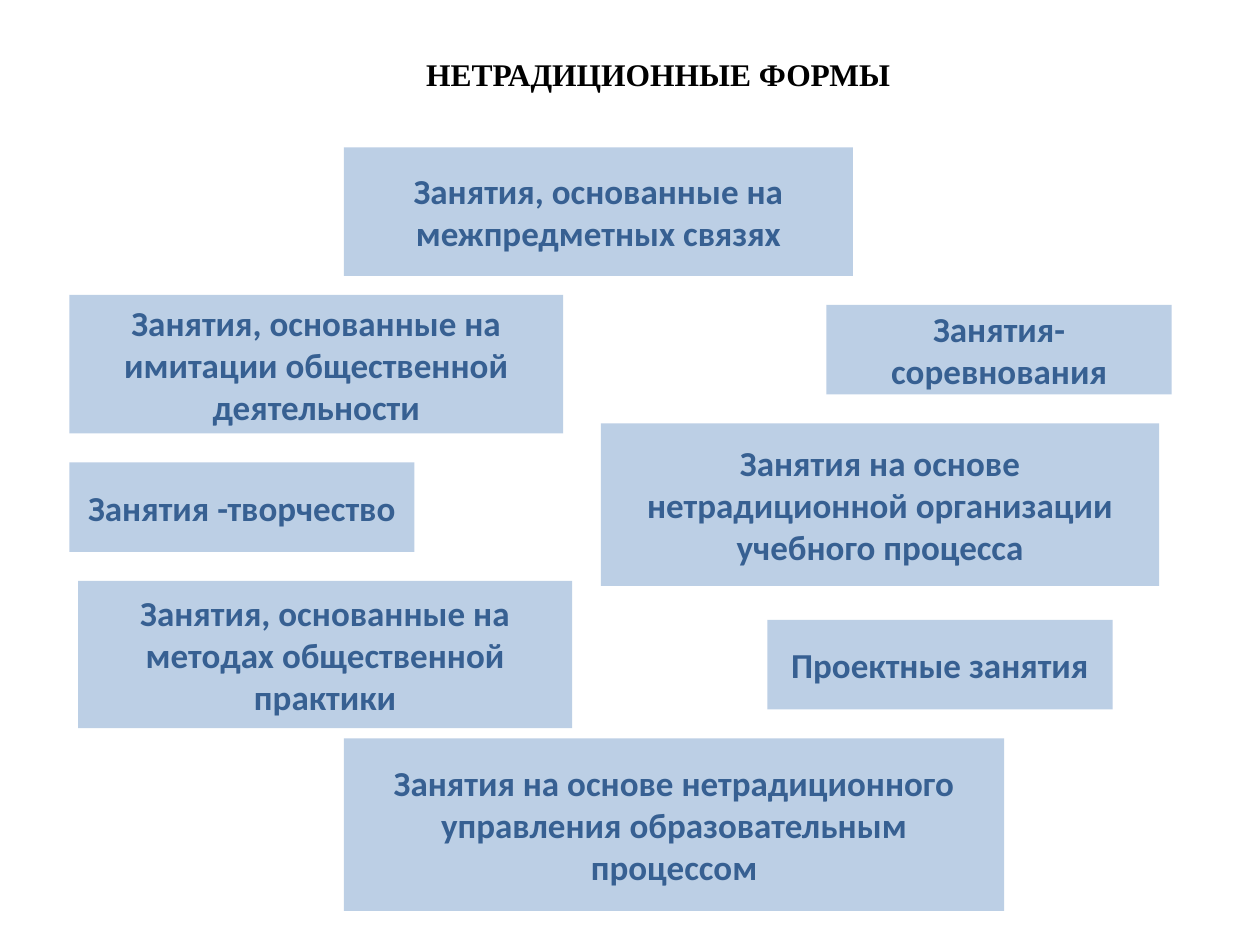
from lxml import etree
from pptx import Presentation
from pptx import util as u
from pptx.dml.color import RGBColor
from pptx.enum import shapes, text
from pptx.oxml import ns

FORMS = [
    ((2.73, 1.17, 4.04, 1.02), "Занятия, основанные на межпредметных связях"),
    ((6.56, 2.42, 2.74, 0.71), "Занятия-соревнования"),
    ((0.62, 4.61, 3.92, 1.17), "Занятия, основанные на методах общественной практики"),
    ((4.77, 3.36, 4.43, 1.29), "Занятия на основе нетрадиционной организации учебного процесса"),
    ((0.55, 3.67, 2.74, 0.71), "Занятия -творчество"),
    ((6.09, 4.92, 2.74, 0.71), "Проектные занятия"),
    ((0.55, 2.34, 3.92, 1.1), "Занятия, основанные на имитации общественной деятельности"),
    ((2.73, 5.86, 5.24, 1.37), "Занятия на основе нетрадиционного управления образовательным процессом"),
]


def color(value):
    """Turn a hex string into a colour."""
    return RGBColor.from_string(value)


def write_text(shape, wording, size, font, hex_color, anchor, spacing=1.0):
    """Write one bold centred paragraph into a shape."""
    frame = shape.text_frame
    frame.word_wrap = True
    frame.auto_size = text.MSO_AUTO_SIZE.NONE
    frame.vertical_anchor = anchor
    paragraph = frame.paragraphs[0]
    paragraph.alignment = text.PP_ALIGN.CENTER
    paragraph.line_spacing = spacing
    run = paragraph.add_run()
    run.text = wording
    run.font.size = u.Pt(size)
    run.font.name = font
    run.font.bold = True
    run.font.color.rgb = color(hex_color)


def set_opacity(shape, percent):
    """Make the solid fill of a shape partly transparent."""
    fill_color = shape.fill._xPr.find(ns.qn("a:solidFill"))[0]
    alpha = etree.SubElement(fill_color, ns.qn("a:alpha"))
    alpha.set("val", str(percent * 1000))


def place_title(slide, box, wording):
    """Move and format the slide title."""
    title = slide.shapes.title
    title.left, title.top, title.width, title.height = map(u.Inches, box)
    write_text(title, wording, size=18, font="Times New Roman", hex_color="000000",
               anchor=text.MSO_ANCHOR.TOP, spacing=1.15)


def add_form(slide, box, wording):
    """Add one translucent box naming a form of lesson."""
    shape = slide.shapes.add_shape(shapes.MSO_SHAPE.RECTANGLE, *map(u.Inches, box))
    shape.shadow.inherit = False
    shape.fill.solid()
    shape.fill.fore_color.rgb = color("4F81BD")
    set_opacity(shape, 38)
    shape.line.fill.background()
    write_text(shape, wording, size=20, font="Calibri", hex_color="376092",
               anchor=text.MSO_ANCHOR.MIDDLE)


def main():
    """Build and save the presentation."""
    presentation = Presentation()
    presentation.slide_width = u.Inches(10)
    presentation.slide_height = u.Inches(7.5)
    slide = presentation.slides.add_slide(presentation.slide_layouts[5])
    place_title(slide, (1.28, 0.34, 7.89, 0.43), "НЕТРАДИЦИОННЫЕ ФОРМЫ")
    for box, wording in FORMS:
        add_form(slide, box, wording)
    presentation.save("out.pptx")


if __name__ == "__main__":
    main()
